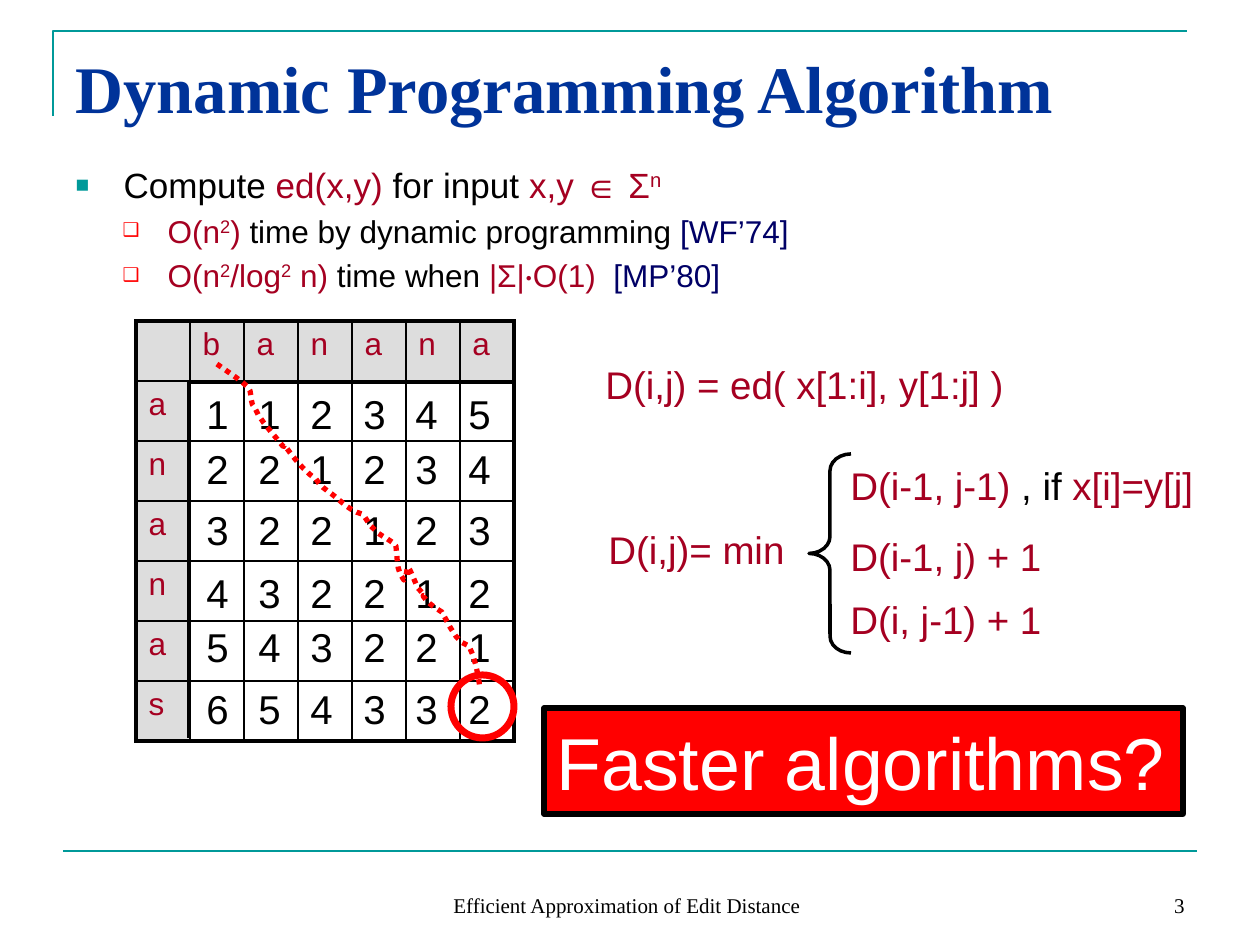
from lxml import etree
from pptx import Presentation
from pptx.dml.color import RGBColor
from pptx.enum.dml import MSO_LINE
from pptx.enum.shapes import MSO_CONNECTOR, MSO_SHAPE
from pptx.enum.text import MSO_ANCHOR, MSO_AUTO_SIZE, PP_ALIGN
from pptx.oxml.ns import qn
from pptx.util import Pt

LEFT, CENTER, RIGHT = PP_ALIGN.LEFT, PP_ALIGN.CENTER, PP_ALIGN.RIGHT
TOP, MIDDLE, BOTTOM = MSO_ANCHOR.TOP, MSO_ANCHOR.MIDDLE, MSO_ANCHOR.BOTTOM
NO_FIT, GROW = MSO_AUTO_SIZE.NONE, MSO_AUTO_SIZE.SHAPE_TO_FIT_TEXT
DOTTED = MSO_LINE.ROUND_DOT
STRAIGHT = MSO_CONNECTOR.STRAIGHT
RECTANGLE, OVAL, BRACE = MSO_SHAPE.RECTANGLE, MSO_SHAPE.OVAL, MSO_SHAPE.LEFT_BRACE

SANS, SERIF = "Arial", "Times New Roman"
BLACK, WHITE, RED, GRAY = "000000", "FFFFFF", "FF0000", "DDDDDD"
TEAL, BLUE, NAVY, CRIMSON = "009999", "003399", "000066", "A50021"

BULLETS = {0: ("■", TEAL, 65, 48, -48), 1: ("❑", RED, 60, 92, -45)}
BODY = [
    (0, [("Compute ", BLACK), ("ed(x,y) ", CRIMSON), ("for input ", BLACK),
         ("x,y ∈ Σ", CRIMSON), ("n", CRIMSON, True)]),
    (1, [("O(n", CRIMSON), ("2", CRIMSON, True), (")", CRIMSON),
         (" time by dynamic programming ", BLACK), ("[WF’74]", NAVY)]),
    (1, [("O(n", CRIMSON), ("2", CRIMSON, True), ("/log", CRIMSON),
         ("2", CRIMSON, True), (" n) ", CRIMSON), ("time when ", BLACK),
         ("|Σ|", CRIMSON), ("·", CRIMSON, False, "Calibri"),
         ("O(1)  ", CRIMSON), ("[MP’80]", NAVY)]),
]
DISTANCES = {383: "112345", 438: "221234", 499: "322123",
             562: "432212", 616: "543221", 678: "654332"}
FORMULAS = [
    (593, 355, 425, [("D(i,j) = ed( x[1:i], y[1:j] )", CRIMSON)]),
    (596, 520, 202, [("D(i,j)= min", CRIMSON)]),
    (838, 456, 369, [("D(i-1, j-1)", CRIMSON), (" , if ", BLACK), ("x[i]=y[j]", CRIMSON)]),
    (838, 527, 217, [("D(i-1, j) + 1", CRIMSON)]),
    (838, 590, 217, [("D(i, j-1) + 1", CRIMSON)]),
]
ALIGNMENT_CURVE = [
    (217, 364),
    (228, 372), (238, 378), (248, 387), (253, 392), (249, 403), (255, 408),
    (258, 418), (276, 437), (282, 445), (286, 450), (282, 442), (286, 447),
    (292, 456), (306, 473), (316, 479), (321, 488), (329, 491), (338, 499),
    (345, 505), (353, 512), (362, 514), (368, 520), (368, 524), (374, 529),
    (379, 536), (391, 539), (396, 546), (398, 561), (396, 570), (404, 580),
    (406, 582), (407, 566), (408, 567), (411, 570), (416, 585), (418, 588),
    (433, 604), (416, 588), (427, 601), (431, 605), (437, 609), (442, 612),
    (449, 624), (456, 643), (469, 646), (476, 659), (479, 680), (480, 688),
]


def px(value):
    return round(value * 914400 / 126)


def color(value):
    return RGBColor.from_string(value)


def bezier_points(controls, steps=5):
    points = [controls[0]]
    for index in range(0, len(controls) - 1, 3):
        a, b, c, d = controls[index:index + 4]
        for step in range(1, steps + 1):
            t = step / steps
            weights = (1 - t) ** 3, 3 * t * (1 - t) ** 2, 3 * t * t * (1 - t), t ** 3
            points.append(tuple(sum(w * p[axis] for w, p in zip(weights, (a, b, c, d)))
                                for axis in (0, 1)))
    return points


class SlideBuilder:
    def __init__(self, slide, font):
        self.slide = slide
        self.shapes = slide.shapes
        self.font = font

    def place(self, shape, left, top, width, height):
        shape.left, shape.top, shape.width, shape.height = map(px, (left, top, width, height))

    def add_runs(self, paragraph, runs, size, font=None, bold=False, align=LEFT):
        paragraph.alignment = align
        for text, ink, *extras in runs:
            raised, face = (*extras, False, None)[:2] if len(extras) != 1 else (extras[0], None)
            run = paragraph.add_run()
            run.text = text
            run.font.size, run.font.bold = Pt(size), bold
            run.font.name = face or font or self.font
            run.font.color.rgb = color(ink)
            if raised:
                run._r.get_or_add_rPr().set("baseline", "30000")

    def title(self, text, box):
        shape = self.shapes.title
        self.place(shape, *box)
        frame = shape.text_frame
        frame.auto_size, frame.vertical_anchor = NO_FIT, MIDDLE
        self.add_runs(frame.paragraphs[0], [(text, BLUE)], 38, SERIF, True)

    def body(self, items, box):
        shape = self.slide.placeholders[1]
        self.place(shape, *box)
        frame = shape.text_frame
        frame.auto_size = NO_FIT
        for index, (level, runs) in enumerate(items):
            paragraph = frame.add_paragraph() if index else frame.paragraphs[0]
            paragraph.level = level
            self.add_runs(paragraph, runs, 20 - 2 * level)
            self.bullet(paragraph, *BULLETS[level])

    def bullet(self, paragraph, mark, ink, percent, margin, indent):
        properties = paragraph._p.get_or_add_pPr()
        properties.set("marL", str(px(margin)))
        properties.set("indent", str(px(indent)))
        bullet_color = etree.SubElement(properties, qn("a:buClr"))
        etree.SubElement(bullet_color, qn("a:srgbClr"), val=ink)
        etree.SubElement(properties, qn("a:buSzPct"), val=str(percent * 1000))
        etree.SubElement(properties, qn("a:buFont"), typeface=self.font)
        etree.SubElement(properties, qn("a:buChar"), char=mark)

    def text(self, runs, box, size, font=None, align=LEFT, anchor=TOP, wrap=False):
        frame = self.shapes.add_textbox(*map(px, box)).text_frame
        frame.word_wrap, frame.vertical_anchor = wrap, anchor
        frame.auto_size = NO_FIT if wrap else GROW
        self.add_runs(frame.paragraphs[0], runs, size, font, align=align)

    def outline(self, shape, ink, weight, fill=None):
        shape.shadow.inherit = False
        shape.line.color.rgb, shape.line.width = color(ink), Pt(weight)
        if fill:
            shape.fill.solid()
            shape.fill.fore_color.rgb = color(fill)
        else:
            shape.fill.background()

    def shape(self, kind, box, ink, weight, fill=None):
        shape = self.shapes.add_shape(kind, *map(px, box))
        self.outline(shape, ink, weight, fill)
        return shape

    def polyline(self, points, ink, weight):
        start, *rest = [(px(x), px(y)) for x, y in points]
        builder = self.shapes.build_freeform(*start)
        builder.add_line_segments(rest, close=False)
        shape = builder.convert_to_shape()
        self.outline(shape, ink, weight)
        return shape

    def line(self, start, end, ink, weight):
        connector = self.shapes.add_connector(STRAIGHT, *map(px, (*start, *end)))
        connector.line.color.rgb, connector.line.width = color(ink), Pt(weight)
        etree.SubElement(connector._element.spPr, qn("a:effectLst"))

    def table(self, across, down, left, top, column, row):
        columns, rows = len(across) + 1, len(down) + 1
        table = self.shapes.add_table(rows, columns, px(left), px(top),
                                      px(column * columns), px(row * rows)).table
        table.first_row = table.horz_banding = False
        for r in range(rows):
            for c in range(columns):
                cell = table.cell(r, c)
                self.borders(cell, {"L": c == 0, "R": c == columns - 1,
                                    "T": r == 0, "B": r == rows - 1})
                if r and c:
                    cell.fill.background()
                    continue
                cell.fill.solid()
                cell.fill.fore_color.rgb = color(GRAY)
                if r or c:
                    label = down[r - 1] if r else across[c - 1]
                    self.add_runs(cell.text_frame.paragraphs[0], [(label, CRIMSON)], 18)

    def borders(self, cell, edges):
        properties = cell._tc.get_or_add_tcPr()
        for side, outer in edges.items():
            border = etree.SubElement(properties, qn(f"a:ln{side}"), w=str(Pt(2.25 if outer else 1)))
            fill = etree.SubElement(border, qn("a:solidFill"))
            etree.SubElement(fill, qn("a:srgbClr"), val=BLACK)


def main():
    presentation = Presentation()
    presentation.slide_width, presentation.slide_height = px(1260), px(945)
    builder = SlideBuilder(presentation.slides.add_slide(presentation.slide_layouts[1]), SANS)

    builder.polyline([(53, 116), (53, 31), (1187, 31)], TEAL, 1.5)
    builder.line((63, 851), (1197, 851), TEAL, 1.5)
    builder.text([("Efficient Approximation of Edit Distance", BLACK)],
                 (329, 861, 596, 63), 12, SERIF, CENTER, BOTTOM, True)
    builder.title("Dynamic Programming Algorithm", (63, 38, 1134, 98))
    builder.body(BODY, (63, 157, 818, 687))

    builder.table("banana", "ananas", 136, 321, 54, 60)
    for top, digits in DISTANCES.items():
        for index, digit in enumerate(digits):
            builder.text([(digit, BLACK)], (194 + 262 * index // 5, top, 48, 60), 23)

    for left, top, width, runs in FORMULAS:
        builder.text(runs, (left, top, width, 59), 22)
    brace = builder.shape(BRACE, (809, 454, 42, 199), BLACK, 2)
    brace.adjustments[0] = 0.4

    builder.shape(OVAL, (451, 675, 63, 63), RED, 4)
    builder.line((189, 382), (189, 738), BLACK, 2.5)
    builder.line((189, 382), (514, 382), BLACK, 2.5)
    banner = builder.shape(RECTANGLE, (544, 708, 639, 106), BLACK, 3, RED)
    banner.text_frame.word_wrap = False
    builder.add_runs(banner.text_frame.paragraphs[0], [("Faster algorithms?", WHITE)], 42)
    curve = builder.polyline(bezier_points(ALIGNMENT_CURVE), RED, 3)
    curve.line.dash_style = DOTTED
    builder.text([("3", BLACK)], (903, 861, 294, 63), 12, SERIF, RIGHT, BOTTOM, True)
    presentation.save("out.pptx")


if __name__ == "__main__":
    main()
